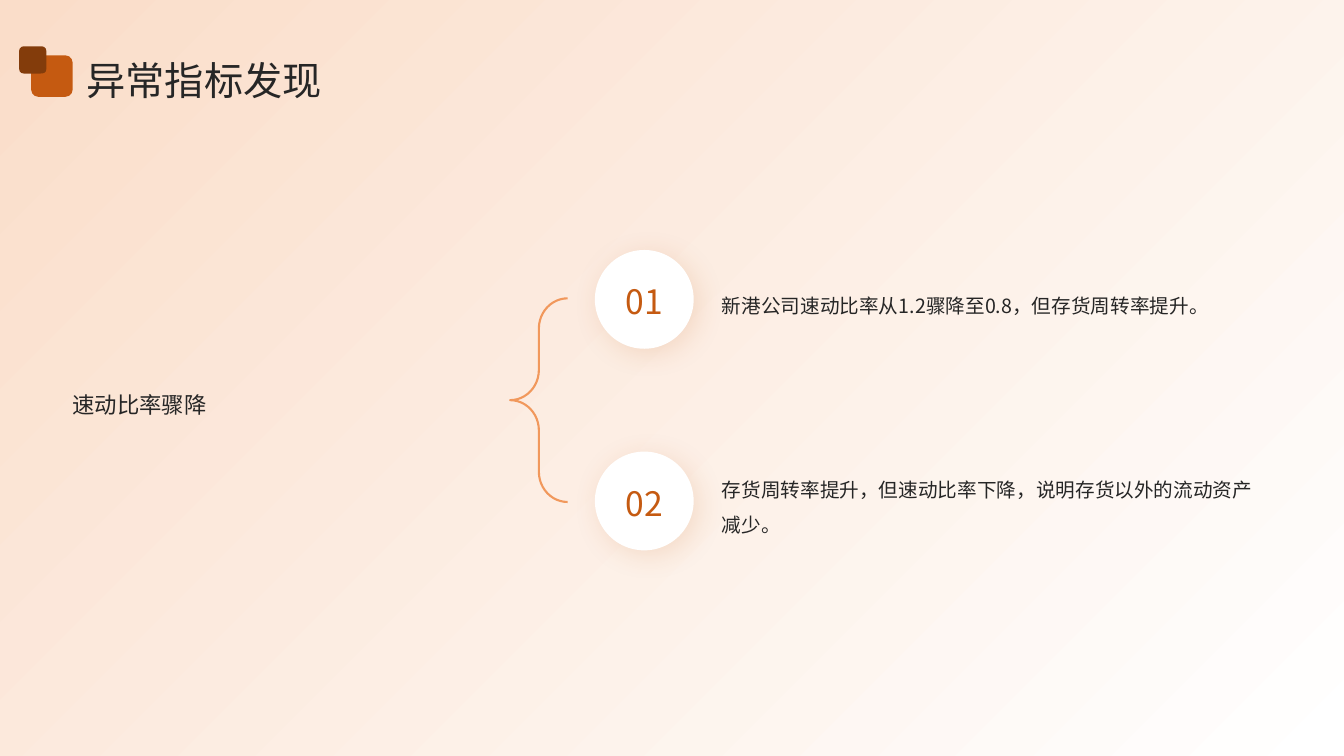
import pptx
import pptx.util
import pptx.dml.color
import pptx.enum.shapes
import pptx.enum.text
import pptx.oxml.ns
import lxml.etree

WIDTH, HEIGHT = 13.33, 7.5
FONT = "Noto Sans CJK SC"
COLORS = {
    "white": "FFFFFF",
    "peach": "FADDC9",
    "orange": "C55A11",
    "brown": "833C0B",
    "brace": "F1985C",
    "text": "262626",
}
SHAPES = pptx.enum.shapes.MSO_SHAPE
ALIGN = pptx.enum.text.PP_ALIGN

# Finding rows: one every ROW_STEP inches
ROW_FIRST, ROW_STEP = 2.97, 2
DISC_LEFT, DISC_SIZE = 5.9, 0.98
FINDING_LEFT, FINDING_WIDTH, FINDING_HEIGHT = 7.16, 5.44, 1.61
FINDINGS = [
    "新港公司速动比率从1.2骤降至0.8，但存货周转率提升。",
    "存货周转率提升，但速动比率下降，说明存货以外的流动资产减少。",
]


def color(name):
    return pptx.dml.color.RGBColor.from_string(COLORS[name])


def inches(*lengths):
    return [pptx.util.Inches(length) for length in lengths]


def add_shape(page, kind, area, fill=None):
    shape = page.shapes.add_shape(kind, *inches(*area))
    shape.shadow.inherit = False
    shape.line.fill.background()
    if fill:
        shape.fill.solid()
        shape.fill.fore_color.rgb = color(fill)
    else:
        shape.fill.background()
    return shape


def write(shape, text, size, ink, spacing, align=ALIGN.LEFT):
    frame = shape.text_frame
    frame.text = text
    frame.word_wrap = True
    frame.vertical_anchor = pptx.enum.text.MSO_ANCHOR.MIDDLE
    para = frame.paragraphs[0]
    para.alignment = align
    para.line_spacing = spacing
    for span in para.runs:
        span.font.size = pptx.util.Pt(size)
        span.font.name = FONT
        span.font.color.rgb = color(ink)
        # East Asian typeface
        lxml.etree.SubElement(span._r.get_or_add_rPr(), pptx.oxml.ns.qn("a:ea"), typeface=FONT)


def add_text(page, area, text, size, spacing):
    box = page.shapes.add_textbox(*inches(*area))
    frame = box.text_frame
    frame.margin_left = frame.margin_top = frame.margin_right = frame.margin_bottom = 0
    write(box, text, size, "text", spacing)


def add_glow(shape):
    """Soft orange shadow falling to the lower right."""
    qn = pptx.oxml.ns.qn
    effects = shape._element.spPr.find(qn("a:effectLst"))
    shadow = lxml.etree.SubElement(
        effects, qn("a:outerShdw"), blurRad=str(pptx.util.Pt(20)),
        dist=str(pptx.util.Pt(5)), dir=str(45 * 60000), algn="tl", rotWithShape="0")
    tint = lxml.etree.SubElement(shadow, qn("a:srgbClr"), val=COLORS["orange"])
    lxml.etree.SubElement(tint, qn("a:alpha"), val="15000")


def add_background(page):
    panel = add_shape(page, SHAPES.RECTANGLE, (0, 0, WIDTH, HEIGHT))
    panel.fill.gradient()
    panel.fill.gradient_angle = 135
    for stop, name, position in zip(panel.fill.gradient_stops, ("white", "peach"), (0, 1)):
        stop.color.rgb = color(name)
        stop.position = position


def add_title(page, text):
    add_text(page, (0.86, 0.51, 11.67, 0.51), text, 28, 1.1)
    tiles = [add_shape(page, SHAPES.ROUNDED_RECTANGLE, (left, top, size, size), fill)
             for left, top, size, fill in ((0.31, 0.55, 0.41, "orange"),
                                           (0.19, 0.46, 0.27, "brown"))]
    page.shapes.add_group_shape(tiles)


def add_finding(page, index, text):
    middle = ROW_FIRST + index * ROW_STEP
    disc = add_shape(page, SHAPES.OVAL,
                     (DISC_LEFT, middle - DISC_SIZE / 2, DISC_SIZE, DISC_SIZE), "white")
    add_glow(disc)
    write(disc, f"{index + 1:02d}", 24, "orange", 1.1, ALIGN.CENTER)
    add_text(page, (FINDING_LEFT, middle - FINDING_HEIGHT / 2, FINDING_WIDTH, FINDING_HEIGHT),
             text, 14, 1.5)


def add_brace(page):
    brace = add_shape(page, SHAPES.LEFT_BRACE, (5.06, 2.96, 0.57, 2.02))
    brace.adjustments[0] = 0.526
    brace.adjustments[1] = 0.5
    brace.line.color.rgb = color("brace")
    brace.line.width = pptx.util.Pt(1.5)


def main():
    deck = pptx.Presentation()
    deck.slide_width, deck.slide_height = inches(WIDTH, HEIGHT)
    page = deck.slides.add_slide(deck.slide_layouts[6])

    add_background(page)
    add_title(page, "异常指标发现")

    # Topic on the left, findings on the right
    add_text(page, (0.72, 2.52, 4.07, 2.91), "速动比率骤降", 16, 1.3)
    add_brace(page)
    for index, text in enumerate(FINDINGS):
        add_finding(page, index, text)

    deck.save("out.pptx")


if __name__ == "__main__":
    main()
